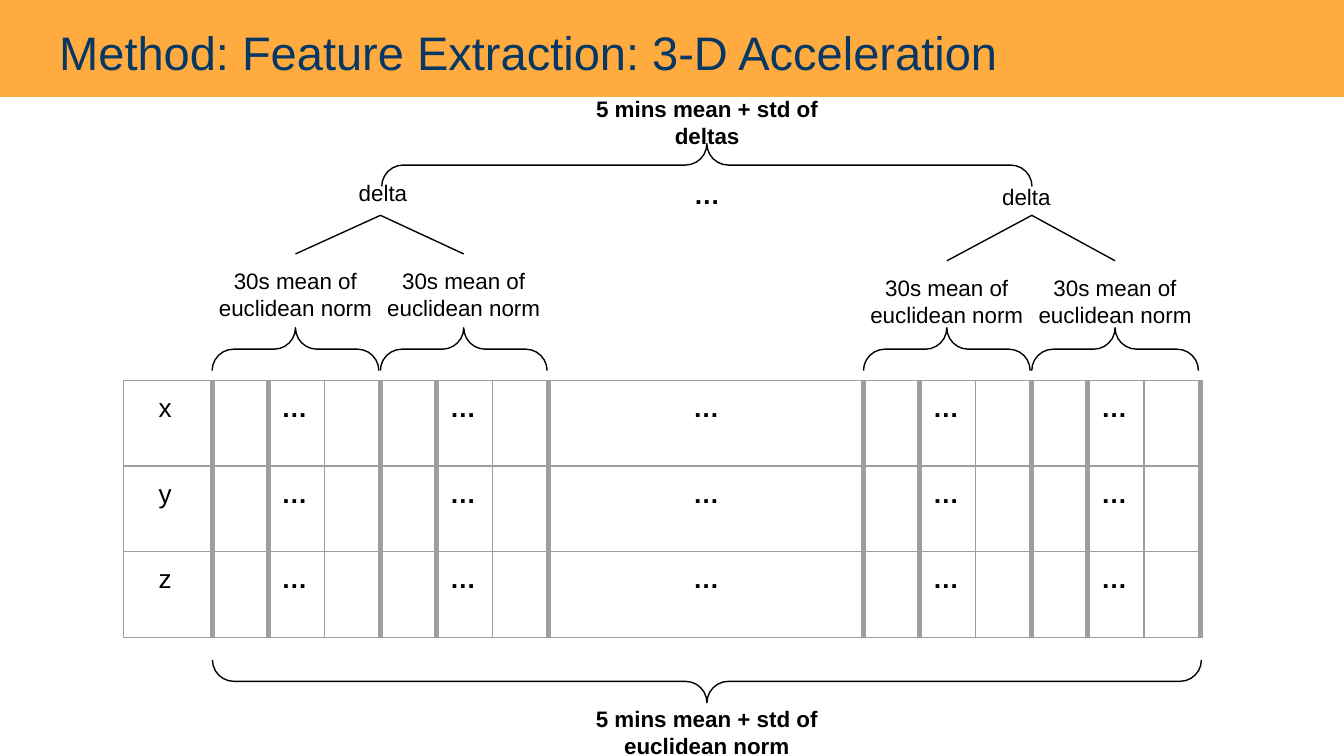
from dataclasses import dataclass
from typing import Any

from lxml.etree import SubElement
from pptx import Presentation
from pptx.dml.color import RGBColor
from pptx.enum.shapes import MSO_CONNECTOR, MSO_SHAPE
from pptx.enum.text import MSO_ANCHOR as Anchor, PP_ALIGN as Align
from pptx.oxml import parse_xml
from pptx.oxml.ns import nsdecls, qn
from pptx.util import Cm, Pt

BLACK = RGBColor(0x00, 0x00, 0x00)
ORANGE = RGBColor(0xFF, 0xAB, 0x40)
NAVY = RGBColor(0x07, 0x37, 0x63)
GREY = RGBColor(0x9E, 0x9E, 0x9E)

TABLE_LEFT, TABLE_TOP, ROW_HEIGHT = 2.34, 7.19, 1.62
AXIS_WIDTH, SAMPLE_WIDTH, GAP_WIDTH = 1.67, 1.06, 5.95
WINDOW_WIDTH = 3 * SAMPLE_WIDTH
FIRST_WINDOW = TABLE_LEFT + AXIS_WIDTH
LATER_WINDOW = FIRST_WINDOW + 2 * WINDOW_WIDTH + GAP_WIDTH
MIDDLE = 13.36
THICK_EDGES = {1, 2, 4, 5, 7, 8, 9, 11, 12, 14}
ELLIPSIS_COLUMNS = {2, 5, 7, 9, 12}
GAP_COLUMN = 7
AXES = ["x", "y", "z"]
ELLIPSIS = "…"
BODY = {"name": "Arial", "size": Pt(12), "bold": False}
STRONG = BODY | {"bold": True}
CELL = BODY | {"size": Pt(14)}
CELL_STRONG = CELL | {"bold": True}
TITLE = BODY | {"size": Pt(25.2)}


@dataclass
class Brace:
    center_x: float
    center_y: float
    span: float
    rotation: int = 270


@dataclass
class Label:
    lines: list[str]
    left: float
    top: float
    width: float
    height: float
    style: dict[str, Any]
    align: Align = Align.CENTER
    color: RGBColor = BLACK
    anchor: Anchor = Anchor.TOP


@dataclass
class WindowPair:
    left: float
    label_top: float
    delta_top: float
    delta_offset: float


def write_lines(frame, lines: list[str], style: dict[str, Any],
                align: Align, color: RGBColor) -> None:
    for index, line in enumerate(lines):
        paragraph = frame.paragraphs[0] if index == 0 else frame.add_paragraph()
        paragraph.alignment = align
        run = paragraph.add_run()
        run.text = line
        for name, value in style.items():
            setattr(run.font, name, value)
        run.font.color.rgb = color


def add_label(slide, label: Label):
    box = slide.shapes.add_textbox(Cm(label.left), Cm(label.top),
                                   Cm(label.width), Cm(label.height))
    frame = box.text_frame
    frame.word_wrap = True
    frame.vertical_anchor = label.anchor
    for side in ("left", "right", "top", "bottom"):
        setattr(frame, f"margin_{side}", Cm(0.25))
    write_lines(frame, label.lines, label.style, label.align, label.color)
    return box


def add_brace(slide, brace: Brace) -> None:
    depth = 0.81
    shape = slide.shapes.add_shape(
        MSO_SHAPE.RIGHT_BRACE, Cm(brace.center_x - depth / 2),
        Cm(brace.center_y - brace.span / 2), Cm(depth), Cm(brace.span))
    shape.rotation = brace.rotation
    shape.adjustments[0] = 0.5
    shape.adjustments[1] = 0.5
    shape.shadow.inherit = False
    shape.fill.background()
    shape.line.color.rgb = BLACK
    shape.line.width = Pt(0.75)


def add_branch(slide, label_box, apex_x: float, apex_y: float) -> None:
    connector = slide.shapes.add_connector(
        MSO_CONNECTOR.STRAIGHT, Cm(0), Cm(0), Cm(apex_x), Cm(apex_y))
    connector.begin_connect(label_box, 0)
    connector.line.color.rgb = BLACK
    connector.line.width = Pt(0.75)
    SubElement(connector._element.spPr, qn("a:effectLst"))


def set_borders(cell, column: int) -> None:
    widths = {"L": 3 if column in THICK_EDGES else 0.75,
              "R": 3 if column + 1 in THICK_EDGES else 0.75,
              "T": 0.75, "B": 0.75}
    properties = cell._tc.get_or_add_tcPr()
    for index, (side, width) in enumerate(widths.items()):
        properties.insert(index, parse_xml(
            f'<a:ln{side} {nsdecls("a")} w="{Pt(width)}"><a:solidFill>'
            f'<a:srgbClr val="{GREY}"/></a:solidFill></a:ln{side}>'))


def add_signal_table(slide) -> None:
    widths = ([AXIS_WIDTH] + [SAMPLE_WIDTH] * 6 + [GAP_WIDTH]
              + [SAMPLE_WIDTH] * 6)
    table = slide.shapes.add_table(
        len(AXES), len(widths), Cm(TABLE_LEFT), Cm(TABLE_TOP),
        Cm(sum(widths)), Cm(ROW_HEIGHT * len(AXES))).table
    table.first_row = False
    table.horz_banding = False
    for column, width in enumerate(widths):
        table.columns[column].width = Cm(width)
    for row, axis in enumerate(AXES):
        table.rows[row].height = Cm(ROW_HEIGHT)
        for column in range(len(widths)):
            cell = table.cell(row, column)
            cell.fill.background()
            set_borders(cell, column)
            for side in ("left", "right", "top", "bottom"):
                setattr(cell, f"margin_{side}", Cm(0.25))
            if column == 0:
                cell.margin_left = Cm(0.66)
                write_lines(cell.text_frame, [axis], CELL, Align.LEFT, BLACK)
            elif column in ELLIPSIS_COLUMNS:
                align = Align.CENTER if column == GAP_COLUMN else Align.LEFT
                write_lines(cell.text_frame, [ELLIPSIS], CELL_STRONG, align, BLACK)


def add_window_pair(slide, pair: WindowPair) -> None:
    span = 3.15
    apex = pair.left + WINDOW_WIDTH
    for left in (pair.left, apex):
        center = left + span / 2
        add_brace(slide, Brace(center, 6.6, span))
        box = add_label(slide, Label(["30s mean of", "euclidean norm"],
                                     center - 1.98, pair.label_top, 3.96, 0.81, BODY))
        add_branch(slide, box, apex, 4.07)
    add_label(slide, Label(["delta"], apex - pair.delta_offset, pair.delta_top,
                           2.39, 0.41, BODY, Align.LEFT))


def add_title(slide) -> None:
    band = slide.shapes.add_shape(MSO_SHAPE.RECTANGLE, Cm(0), Cm(-0.05),
                                  Cm(25.4), Cm(1.85))
    band.shadow.inherit = False
    band.fill.solid()
    band.fill.fore_color.rgb = ORANGE
    band.line.color.rgb = ORANGE
    band.line.width = Pt(1.5)
    add_label(slide, Label(["Method: Feature Extraction: 3-D Acceleration"],
                           0.87, 0.18, 23.66, 1.6, TITLE, Align.LEFT, NAVY,
                           Anchor.MIDDLE))


def main() -> None:
    presentation = Presentation()
    presentation.slide_width = Cm(25.4)
    presentation.slide_height = Cm(14.29)
    slide = presentation.slides.add_slide(presentation.slide_layouts[6])
    add_title(slide)
    add_signal_table(slide)
    for pair in (WindowPair(FIRST_WINDOW, 4.8, 3.23, 0.66),
                 WindowPair(LATER_WINDOW, 4.93, 3.3, 0.81)):
        add_window_pair(slide, pair)
    for brace in (Brace(MIDDLE, 3.12, 12.29), Brace(MIDDLE, 12.88, 18.69, 90)):
        add_brace(slide, brace)
    for label in (
        Label(["5 mins mean + std of", "euclidean norm"],
              MIDDLE - 4.85, 13.08, 9.7, 1.4, STRONG),
        Label([ELLIPSIS], MIDDLE - 1.78, 3.12, 3.56, 0.64, CELL_STRONG),
        Label(["5 mins mean + std of deltas"],
              MIDDLE - 2.41, 1.55, 4.83, 0.64, STRONG),
    ):
        add_label(slide, label)
    presentation.save("out.pptx")


if __name__ == "__main__":
    main()
